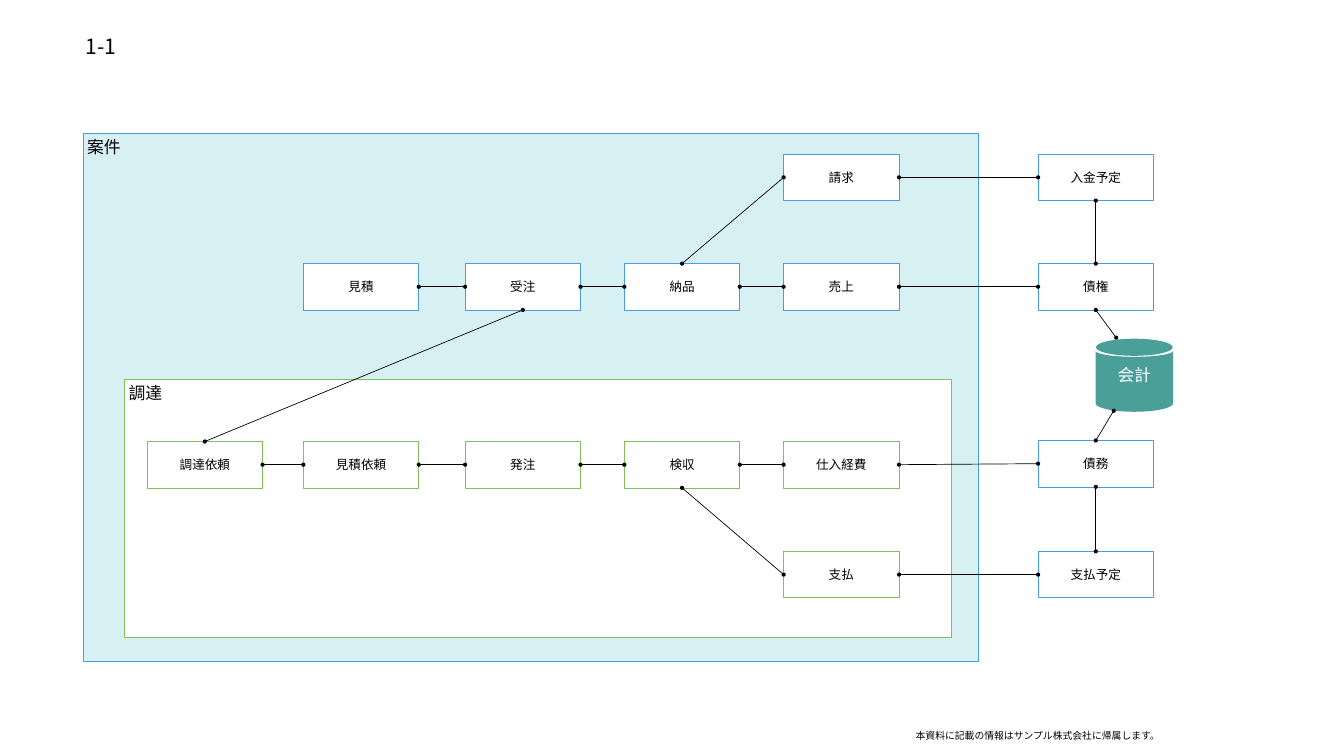
import math
from dataclasses import dataclass

from lxml import etree
from pptx import Presentation
from pptx.dml.color import RGBColor
from pptx.enum import shapes, text
from pptx.oxml import ns
from pptx.util import Inches, Pt


@dataclass(frozen=True)
class Theme:
    font: str = "Noto Sans CJK JP"
    black: str = "000000"
    white: str = "FFFFFF"
    blue: str = "469DE3"
    green: str = "82BF55"
    pale_blue: str = "D7F0F4"
    teal: str = "4A9F99"
    title: int = 30
    panel: int = 24
    step: int = 18
    note: int = 14
    line: int = 1


THEME = Theme()
STEP_WIDTH, STEP_HEIGHT = 2.29, 0.92
COLUMNS = (2.92, 6.02, 9.23, 12.39, 15.55, 20.6)
TOP, BOTTOM, LEFT, RIGHT = 0, 2, 1, 3
BILLING, SALES, PURCHASE, DEBT, PAYMENT = 3.06, 5.23, 8.76, 8.74, 10.94

# label, column, top, border colour
STEPS = (
    ("請求", 4, BILLING, THEME.blue),
    ("見積", 1, SALES, THEME.blue),
    ("受注", 2, SALES, THEME.blue),
    ("納品", 3, SALES, THEME.blue),
    ("売上", 4, SALES, THEME.blue),
    ("入金予定", 5, BILLING, THEME.blue),
    ("債権", 5, SALES, THEME.blue),
    ("債務", 5, DEBT, THEME.blue),
    ("支払予定", 5, PAYMENT, THEME.blue),
    ("調達依頼", 0, PURCHASE, THEME.green),
    ("見積依頼", 1, PURCHASE, THEME.green),
    ("発注", 2, PURCHASE, THEME.green),
    ("検収", 3, PURCHASE, THEME.green),
    ("仕入経費", 4, PURCHASE, THEME.green),
    ("支払", 4, PAYMENT, THEME.green),
)
# Each neighbouring pair in a row is linked right side to left side.
ROWS = (
    ("請求", "入金予定"),
    ("見積", "受注", "納品", "売上", "債権"),
    ("調達依頼", "見積依頼", "発注", "検収", "仕入経費", "債務"),
    ("支払", "支払予定"),
)
CROSS_LINKS = (
    ("納品", TOP, "請求", LEFT),
    ("受注", BOTTOM, "調達依頼", TOP),
    ("検収", BOTTOM, "支払", LEFT),
    ("入金予定", BOTTOM, "債権", TOP),
    ("債務", BOTTOM, "支払予定", TOP),
)
LEDGER_LINKS = (("債権", BOTTOM, 22.15, 6.7), ("債務", TOP, 22.1, 8.15))


def write(shape, content, size, color=THEME.black, align=text.PP_ALIGN.LEFT,
          anchor=text.MSO_ANCHOR.MIDDLE, inset=0.08, wrap=True):
    frame = shape.text_frame
    frame.text = content
    margin = Inches(inset)
    frame_format = {
        "margin_left": margin, "margin_right": margin,
        "margin_top": margin, "margin_bottom": margin,
        "vertical_anchor": anchor, "word_wrap": wrap,
        "auto_size": text.MSO_AUTO_SIZE.NONE,
    }
    for name, value in frame_format.items():
        setattr(frame, name, value)
    paragraph = frame.paragraphs[0]
    paragraph.alignment = align
    run = paragraph.runs[0]
    for name, value in {"size": Pt(size), "name": THEME.font}.items():
        setattr(run.font, name, value)
    run.font.color.rgb = RGBColor.from_string(color)
    east_asian = etree.SubElement(run._r.get_or_add_rPr(), ns.qn("a:ea"))
    east_asian.set("typeface", THEME.font)


def paint(shape, fill, border=None):
    shape.shadow.inherit = False
    shape.fill.solid()
    shape.fill.fore_color.rgb = RGBColor.from_string(fill)
    if border:
        shape.line.color.rgb = RGBColor.from_string(border)
        shape.line.width = Pt(THEME.line)
    else:
        shape.line.fill.background()


def add_box(slide, left, top, width, height, fill, border):
    box = slide.shapes.add_shape(shapes.MSO_SHAPE.RECTANGLE, Inches(left),
                                 Inches(top), Inches(width), Inches(height))
    paint(box, fill, border)
    return box


def add_panel(slide, label, bounds, fill, border):
    panel = add_box(slide, *bounds, fill, border)
    write(panel, label, THEME.panel, anchor=text.MSO_ANCHOR.TOP)


def add_step(slide, label, column, top, border):
    step = add_box(slide, COLUMNS[column], top, STEP_WIDTH, STEP_HEIGHT,
                   THEME.white, border)
    write(step, label, THEME.step, align=text.PP_ALIGN.CENTER)
    return step


def arc(center_y, radius_x, radius_y, start, end):
    """Points on the ledger's vertical axis ellipse, angles in degrees."""
    count = 40
    angles = [math.radians(start + (end - start) * i / count)
              for i in range(count + 1)]
    return [(Inches(22.51 + radius_x * math.cos(a)),
             Inches(center_y + radius_y * math.sin(a))) for a in angles]


def add_ledger(slide, label):
    """A cylinder whose lid is parted from its body by a thin gap."""
    lid = arc(6.89, 0.76, 0.17, 0, 360)
    body = arc(6.96, 0.77, 0.12, 0, 180) + arc(8, 0.77, 0.17, 180, 0)
    builder = slide.shapes.build_freeform(*lid[0])
    builder.add_line_segments(lid[1:], close=True)
    builder.move_to(*body[0])
    builder.add_line_segments(body[1:], close=True)
    ledger = builder.convert_to_shape()
    paint(ledger, THEME.teal)
    write(ledger, label, THEME.panel, THEME.white, text.PP_ALIGN.CENTER)


def add_link(slide, start, start_side, end=None, end_side=None, point=(0, 0)):
    """Link a step to another step, or to a free point if there is none."""
    x, y = map(Inches, point)
    link = slide.shapes.add_connector(shapes.MSO_CONNECTOR.STRAIGHT, x, y, x, y)
    link.begin_connect(start, start_side)
    if end is not None:
        link.end_connect(end, end_side)
    link.line.color.rgb = RGBColor.from_string(THEME.black)
    link.line.width = Pt(THEME.line)
    outline = link.line._get_or_add_ln()
    for tag in ("a:headEnd", "a:tailEnd"):
        etree.SubElement(outline, ns.qn(tag)).set("type", "oval")
    etree.SubElement(link._element.spPr, ns.qn("a:effectLst"))


def add_title(slide, content):
    title = slide.shapes.title
    bounds = {"left": 1.64, "top": 0.65, "width": 0.89, "height": 0.53}
    for name, value in bounds.items():
        setattr(title, name, Inches(value))
    write(title, content, THEME.title, inset=0.06, wrap=False)


def add_note(slide, content):
    note = slide.shapes.add_textbox(Inches(18.09), Inches(14.42),
                                    Inches(5.01), Inches(0.35))
    write(note, content, THEME.note)


def main():
    deck = Presentation()
    deck.slide_width, deck.slide_height = Inches(26.67), Inches(15)
    slide = deck.slides.add_slide(deck.slide_layouts[5])

    add_title(slide, "1-1")
    add_note(slide, "本資料に記載の情報はサンプル株式会社に帰属します。")
    add_panel(slide, "案件", (1.65, 2.64, 17.77, 10.49),
              THEME.pale_blue, THEME.blue)
    add_panel(slide, "調達", (2.47, 7.52, 16.41, 5.12),
              THEME.white, THEME.green)
    steps = {step[0]: add_step(slide, *step) for step in STEPS}
    add_ledger(slide, "会計")

    for row in ROWS:
        for before, after in zip(row, row[1:]):
            add_link(slide, steps[before], RIGHT, steps[after], LEFT)
    for start, start_side, end, end_side in CROSS_LINKS:
        add_link(slide, steps[start], start_side, steps[end], end_side)
    for start, side, x, y in LEDGER_LINKS:
        add_link(slide, steps[start], side, point=(x, y))

    deck.save("out.pptx")


if __name__ == "__main__":
    main()
